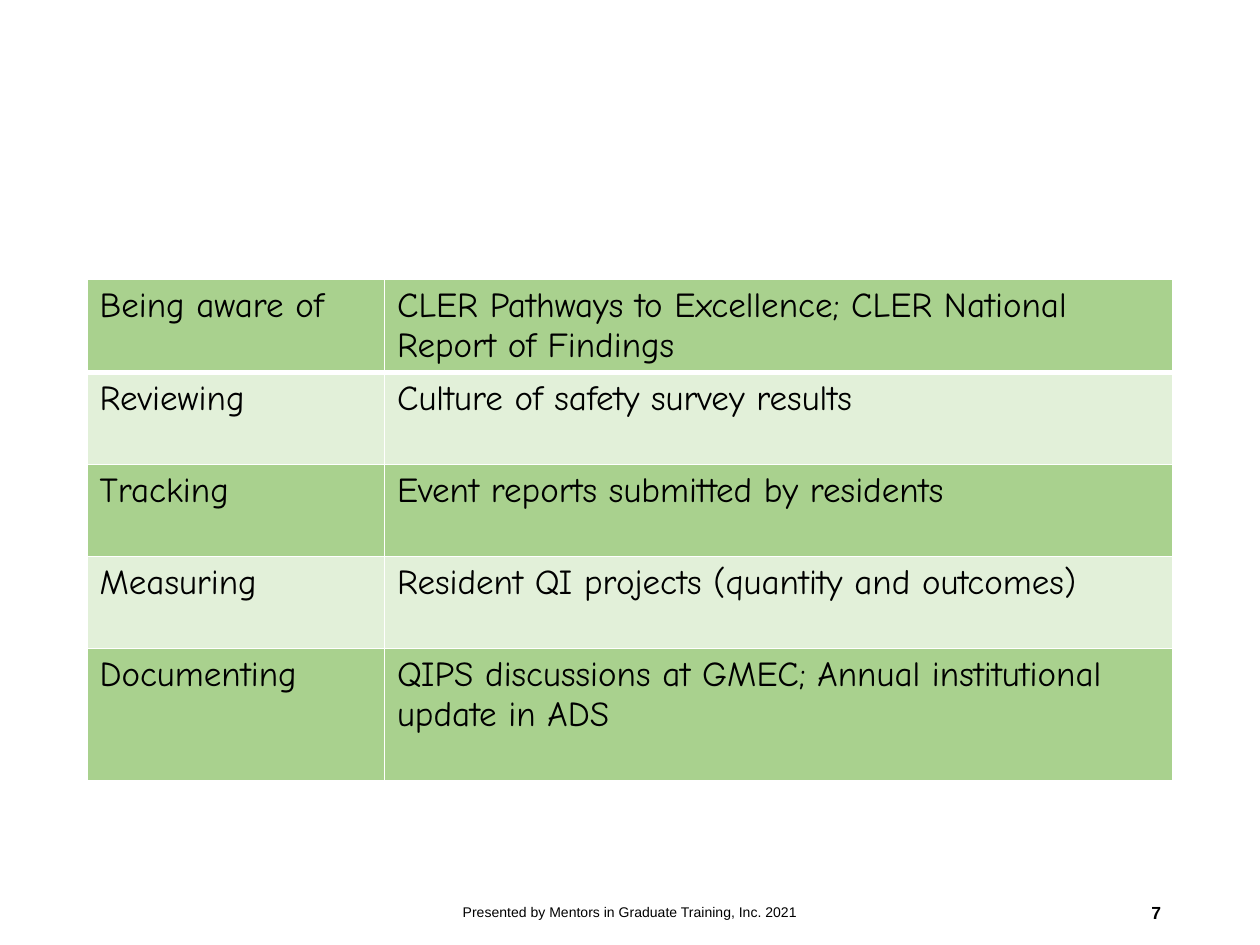
import pptx
import pptx.dml.color
import pptx.enum.text
import pptx.oxml
import pptx.oxml.ns
import pptx.util

Pt = pptx.util.Pt
ALIGN = pptx.enum.text.PP_ALIGN
BLACK = pptx.dml.color.RGBColor(0x00, 0x00, 0x00)
WHITE = pptx.dml.color.RGBColor(0xFF, 0xFF, 0xFF)
GREEN = pptx.dml.color.RGBColor(0xA9, 0xD1, 0x8E)
PALE_GREEN = pptx.dml.color.RGBColor(0xE2, 0xF0, 0xD9)

ACTIVITIES = [
    ("Being aware of", "CLER Pathways to Excellence; CLER National Report of Findings"),
    ("Reviewing", "Culture of safety survey results"),
    ("Tracking", "Event reports submitted by residents"),
    ("Measuring", "Resident QI projects (quantity and outcomes)"),
    ("Documenting", "QIPS discussions at GMEC; Annual institutional update in ADS"),
]
COLUMN_WIDTHS = [170, 450.7]
ROW_HEIGHTS = [52.6] * 4 + [75.4]


def write_text(frame, text, font_name, size, align=ALIGN.LEFT, bold=False):
    """Fill a text frame with one formatted paragraph."""
    frame.text = text
    para = frame.paragraphs[0]
    para.alignment = align
    for span in para.runs:
        span.font.name = font_name
        span.font.size = Pt(size)
        span.font.bold = bold
        span.font.color.rgb = BLACK


def set_borders(cell, widths):
    """Draw white borders on a cell, given widths by side."""
    properties = cell._tc.get_or_add_tcPr()
    for position, (side, width) in enumerate(widths.items()):
        line = pptx.oxml.parse_xml(
            f'<a:ln{side} {pptx.oxml.ns.nsdecls("a")} w="{Pt(width)}">'
            f'<a:solidFill><a:srgbClr val="{WHITE}"/></a:solidFill></a:ln{side}>'
        )
        properties.insert(position, line)


def add_activity_table(page):
    """Add the banded table of activities."""
    frame = page.shapes.add_table(
        len(ACTIVITIES), len(COLUMN_WIDTHS), Pt(49.7), Pt(159.6),
        Pt(sum(COLUMN_WIDTHS)), Pt(sum(ROW_HEIGHTS)))
    table = frame.table
    for column, width in zip(table.columns, COLUMN_WIDTHS):
        column.width = Pt(width)
    for index, (row, height) in enumerate(zip(table.rows, ROW_HEIGHTS)):
        row.height = Pt(height)
        borders = {"L": 1, "R": 1, "T": 3 if index == 1 else 1, "B": 3 if index == 0 else 1}
        for cell, text in zip(row.cells, ACTIVITIES[index]):
            write_text(cell.text_frame, text, "Comic Neue", 20)
            set_borders(cell, borders)
            cell.fill.solid()
            cell.fill.fore_color.rgb = PALE_GREEN if index % 2 else GREEN


def add_footer(page, left, width, text, size, align, bold=False):
    """Add a text box on the footer line."""
    box = page.shapes.add_textbox(Pt(left), Pt(506.9), Pt(width), Pt(28.8))
    box.text_frame.word_wrap = True
    box.text_frame.vertical_anchor = pptx.enum.text.MSO_ANCHOR.MIDDLE
    write_text(box.text_frame, text, "Arial", size, align, bold)


def main():
    """Build the slide and save the deck."""
    deck = pptx.Presentation()
    deck.slide_width, deck.slide_height = Pt(720), Pt(540)
    page = deck.slides.add_slide(deck.slide_layouts[6])
    add_activity_table(page)
    add_footer(page, 238.5, 243, "Presented by Mentors in Graduate Training, Inc. 2021", 8, ALIGN.CENTER)
    add_footer(page, 508.5, 162, "7", 10, ALIGN.RIGHT, bold=True)
    deck.save("out.pptx")


if __name__ == "__main__":
    main()
